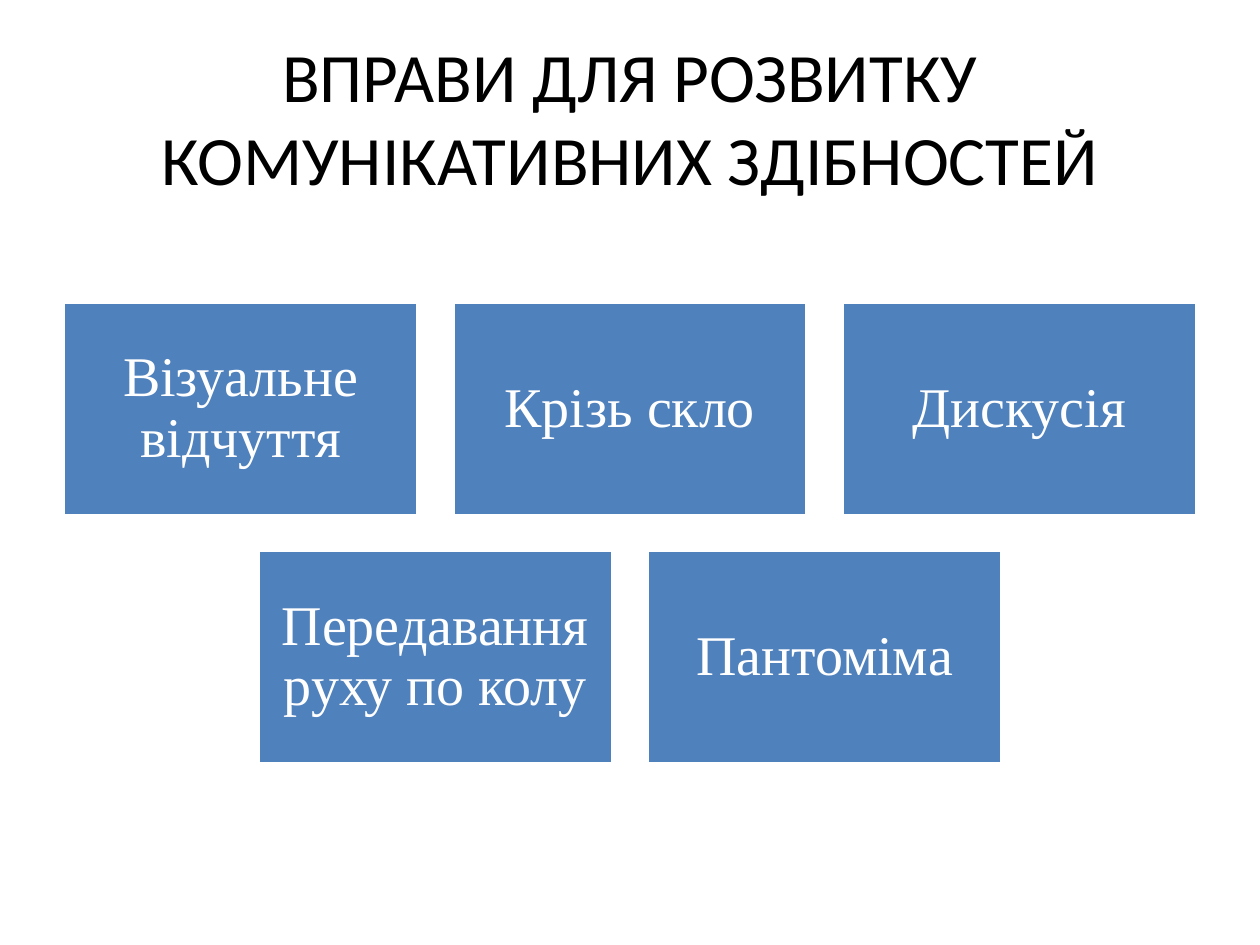
from pptx import Presentation
from pptx import util as u
from pptx.dml.color import RGBColor
from pptx.enum import shapes, text

TITLE = "ВПРАВИ ДЛЯ РОЗВИТКУ КОМУНІКАТИВНИХ ЗДІБНОСТЕЙ"
EXERCISE_ROWS = [
    ["Візуальне відчуття", "Крізь скло", "Дискусія"],
    ["Передавання руху по колу", "Пантоміма"],
]
SLIDE_WIDTH, SLIDE_HEIGHT = 10, 7.5
BOX_WIDTH, BOX_HEIGHT, GAP = 2.81, 1.69, 0.28
ROWS_TOP = 2.4


def color(value):
    """Return the colour for a hex string."""
    return RGBColor.from_string(value)


def write_text(shape, content, *, font, size, ink, inset, line_spacing=1.0):
    """Write centred text into a shape with the given format."""
    frame = shape.text_frame
    frame.word_wrap = True
    frame.auto_size = text.MSO_AUTO_SIZE.NONE
    frame.vertical_anchor = text.MSO_ANCHOR.MIDDLE
    frame.margin_left = frame.margin_right = u.Inches(inset)
    frame.margin_top = frame.margin_bottom = u.Inches(inset)
    paragraph = frame.paragraphs[0]
    paragraph.alignment = text.PP_ALIGN.CENTER
    paragraph.line_spacing = line_spacing
    run = paragraph.add_run()
    run.text = content
    run.font.name = font
    run.font.size = u.Pt(size)
    run.font.color.rgb = color(ink)


def add_title(slide, content):
    """Place and fill the title placeholder."""
    title = slide.shapes.title
    title.left, title.top = u.Inches(0.5), u.Inches(0.3)
    title.width, title.height = u.Inches(9), u.Inches(1.25)
    write_text(title, content, font="Calibri", size=39.6, ink="000000", inset=0.05)


def add_box(slide, content, left, top):
    """Add one labelled exercise box."""
    box = slide.shapes.add_shape(
        shapes.MSO_SHAPE.RECTANGLE, u.Inches(left), u.Inches(top),
        u.Inches(BOX_WIDTH), u.Inches(BOX_HEIGHT))
    box.shadow.inherit = False
    box.fill.solid()
    box.fill.fore_color.rgb = color("4F81BD")
    box.line.color.rgb = color("FFFFFF")
    box.line.width = u.Pt(2)
    write_text(box, content, font="Times New Roman", size=32, ink="FFFFFF",
               inset=0.13, line_spacing=0.9)


def add_box_row(slide, labels, top):
    """Add a row of equally spaced boxes centred on the slide."""
    step = BOX_WIDTH + GAP
    left = (SLIDE_WIDTH - len(labels) * step + GAP) / 2
    for index, label in enumerate(labels):
        add_box(slide, label, left + index * step, top)


def main():
    """Build and save the presentation."""
    presentation = Presentation()
    presentation.slide_width = u.Inches(SLIDE_WIDTH)
    presentation.slide_height = u.Inches(SLIDE_HEIGHT)
    slide = presentation.slides.add_slide(presentation.slide_layouts[5])
    add_title(slide, TITLE)
    for index, labels in enumerate(EXERCISE_ROWS):
        add_box_row(slide, labels, ROWS_TOP + index * (BOX_HEIGHT + GAP))
    presentation.save("out.pptx")


if __name__ == "__main__":
    main()
